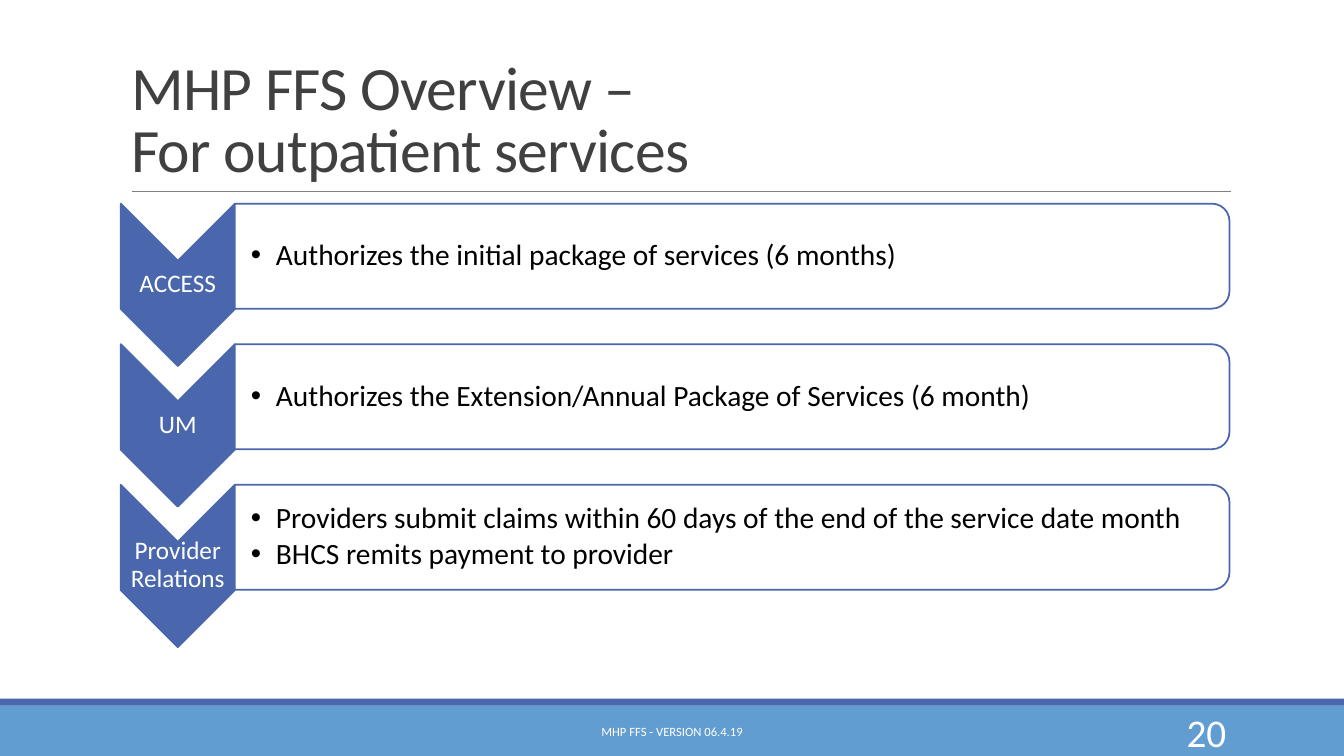
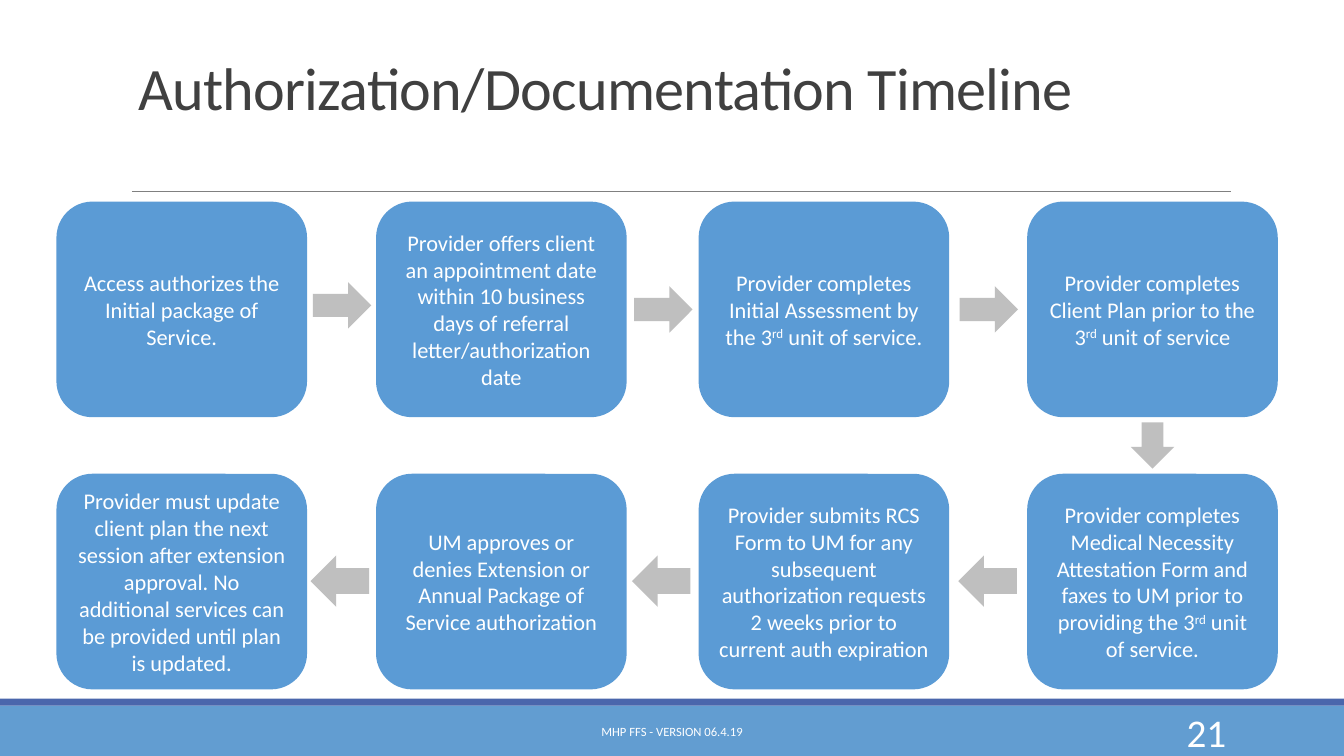
from lxml import etree
from pptx import Presentation
from pptx.dml.color import RGBColor
from pptx.enum import shapes, text
from pptx.oxml import ns
from pptx.util import Pt

FONT = "Calibri"
WHITE, BLACK, INK = "FFFFFF", "000000", "404040"
NAVY, BAND_BLUE, BOX_BLUE = "4A66AC", "629DD1", "5B9BD5"
RULE_GRAY, ARROW_GRAY = "808080", "BFBFBF"
SHAPE = shapes.MSO_SHAPE
LEFT, CENTER, RIGHT = text.PP_ALIGN.LEFT, text.PP_ALIGN.CENTER, text.PP_ALIGN.RIGHT
MIDDLE, BOTTOM = text.MSO_ANCHOR.MIDDLE, text.MSO_ANCHOR.BOTTOM


def add_block(page, kind, left, top, width, height, fill, line=None, turn=0):
    """Add a flat preset shape; a turned one keeps its centre."""
    block = page.shapes.add_shape(kind, Pt(left), Pt(top), Pt(width), Pt(height))
    block.rotation = turn
    block.shadow.inherit = False
    block.fill.solid()
    block.fill.fore_color.rgb = RGBColor.from_string(fill)
    if line:
        block.line.color.rgb = RGBColor.from_string(line)
        block.line.width = Pt(1.25)
    else:
        block.line.fill.background()
    return block


def write(box, *lines, size, color=WHITE, align=CENTER, anchor=MIDDLE, spacing=None,
          after=0, insets=None, bullet=False, tracking=0):
    """Fill a shape, one paragraph a line; \\n breaks a line and ^...^ is raised."""
    frame = box.text_frame
    frame.word_wrap = True
    frame.auto_size = text.MSO_AUTO_SIZE.NONE
    frame.vertical_anchor = anchor
    if insets:
        (frame.margin_left, frame.margin_top,
         frame.margin_right, frame.margin_bottom) = map(Pt, insets)
    for number, line in enumerate(lines):
        para = frame.add_paragraph() if number else frame.paragraphs[0]
        para.alignment = align
        para.line_spacing = spacing
        para.space_after = Pt(after)
        if bullet:
            props = para._p.get_or_add_pPr()
            props.set("marL", str(Pt(18)))
            props.set("indent", str(-Pt(18)))
            etree.SubElement(props, ns.qn("a:buFont")).set("typeface", "Arial")
            etree.SubElement(props, ns.qn("a:buChar")).set("char", "•")
        for row, part in enumerate(line.split("\n")):
            if row:
                para.add_line_break()
            for index, piece in enumerate(part.split("^")):
                span = para.add_run()
                span.text = piece
                span.font.name = FONT
                span.font.size = Pt(size)
                span.font.color.rgb = RGBColor.from_string(color)
                if tracking:
                    span.font._element.set("spc", str(int(tracking * 100)))
                if index % 2:
                    span.font._element.set("baseline", "30000")


deck = Presentation()
deck.slide_width, deck.slide_height = Pt(960), Pt(540)
layout = deck.slide_layouts[5]
overview, timeline = [deck.slides.add_slide(layout) for _ in range(2)]

# Bands and rule, moved to the layout so that both slides show them
rule = overview.shapes.add_connector(
    shapes.MSO_CONNECTOR.STRAIGHT, Pt(94.3), Pt(136.8), Pt(879), Pt(136.8))
rule.line.color.rgb = RGBColor.from_string(RULE_GRAY)
rule.line.width = Pt(0.5)
etree.SubElement(rule.element.spPr, ns.qn("a:effectLst"))
for part in (add_block(overview, SHAPE.RECTANGLE, 0, 504, 960, 36, BAND_BLUE),
             add_block(overview, SHAPE.RECTANGLE, 0, 499, 960, 5, NAVY),
             rule):
    layout.shapes.element.append(part.element)

# Titles, footers and page numbers
for page, number, heading, left, height, size in (
        (overview, "20", "MHP FFS Overview –\nFor outpatient services", 86.4, 114.5, 44),
        (timeline, "21", "Authorization/Documentation Timeline", 91.4, 70, 43)):
    title = page.shapes.title
    title.left, title.top, title.width, title.height = map(Pt, (left, 21.6, 792, height))
    write(title, heading, size=size, color=INK, align=LEFT, anchor=BOTTOM,
          spacing=0.85, tracking=-0.5)
    footer = page.shapes.add_textbox(Pt(290), Pt(508.5), Pt(380), Pt(28.5))
    write(footer, "MHP FFS - VERSION 06.4.19", size=9)
    page_number = page.shapes.add_textbox(Pt(780), Pt(508.5), Pt(103), Pt(28.5))
    write(page_number, number, size=28, align=RIGHT)

# Overview: one chevron and one list box per step
steps = (
    ("ACCESS", ["Authorizes the initial package of services (6 months)"]),
    ("UM", ["Authorizes the Extension/Annual Package of Services (6 month)"]),
    ("Provider Relations",
     ["Providers submit claims within 60 days of the end of the service date month",
      "BHCS remits payment to provider"]),
)
CHEVRON_LONG, CHEVRON_WIDE, LIST_LONG, LIST_HIGH = 116, 81.5, 710.6, 75
for row, (name, duties) in enumerate(steps):
    top = 145.5 + row * 100.4
    add_block(overview, SHAPE.CHEVRON, 127 - CHEVRON_LONG / 2,
              top + (CHEVRON_LONG - CHEVRON_WIDE) / 2,
              CHEVRON_LONG, CHEVRON_WIDE, NAVY, NAVY, turn=90)
    label = overview.shapes.add_textbox(Pt(86.2), Pt(top + 40.3), Pt(81.5), Pt(34.5))
    write(label, name, size=18, spacing=0.9, insets=(1, 1, 1, 1))
    add_block(overview, SHAPE.ROUND_2_SAME_RECTANGLE, 522.9 - LIST_HIGH / 2,
              top + (LIST_HIGH - LIST_LONG) / 2,
              LIST_HIGH, LIST_LONG, WHITE, NAVY, turn=90)
    listing = overview.shapes.add_textbox(Pt(167.6), Pt(top + 3.7), Pt(707), Pt(67.7))
    write(listing, *duties, size=21, color=BLACK, align=LEFT, spacing=0.9, after=3,
          insets=(11.5, 1, 1, 1), bullet=True)

# Timeline: two rows of boxes, read right along the top and back along the bottom
columns = (40.3, 268.6, 499, 733.7)
box_rows = (
    (144, ("Access authorizes the Initial package of Service.",
           "Provider offers client an appointment date within 10 business days of "
           "referral letter/authorization date",
           "Provider completes Initial Assessment by the 3^rd^ unit of service.",
           "Provider completes Client Plan prior to the 3^rd^ unit of service")),
    (338.4, ("Provider must update client plan the next session after extension approval. "
             "No additional services can be provided until plan is updated.",
             "UM approves or denies Extension or Annual Package of Service authorization",
             "Provider submits RCS Form to UM for any subsequent authorization requests "
             "2 weeks prior to current auth expiration",
             "Provider completes Medical Necessity Attestation Form and faxes to UM prior "
             "to providing the 3^rd^ unit of service.")),
)
for top, captions in box_rows:
    for left, caption in zip(columns, captions):
        box = add_block(timeline, SHAPE.ROUNDED_RECTANGLE, left, top, 179, 154, BOX_BLUE)
        write(box, caption, size=16)

for left, top in ((223.4, 201.6), (452.9, 204.5), (685.4, 204.5)):
    add_block(timeline, SHAPE.RIGHT_ARROW, left, top, 41.8, 33.1, ARROW_GRAY)
for left in (221.8, 451.4, 684.5):
    add_block(timeline, SHAPE.LEFT_ARROW, left, 396.7, 41.8, 36.7, ARROW_GRAY)
add_block(timeline, SHAPE.DOWN_ARROW, 807.8, 301.7, 31, 33.1, ARROW_GRAY)

deck.save("out.pptx")
